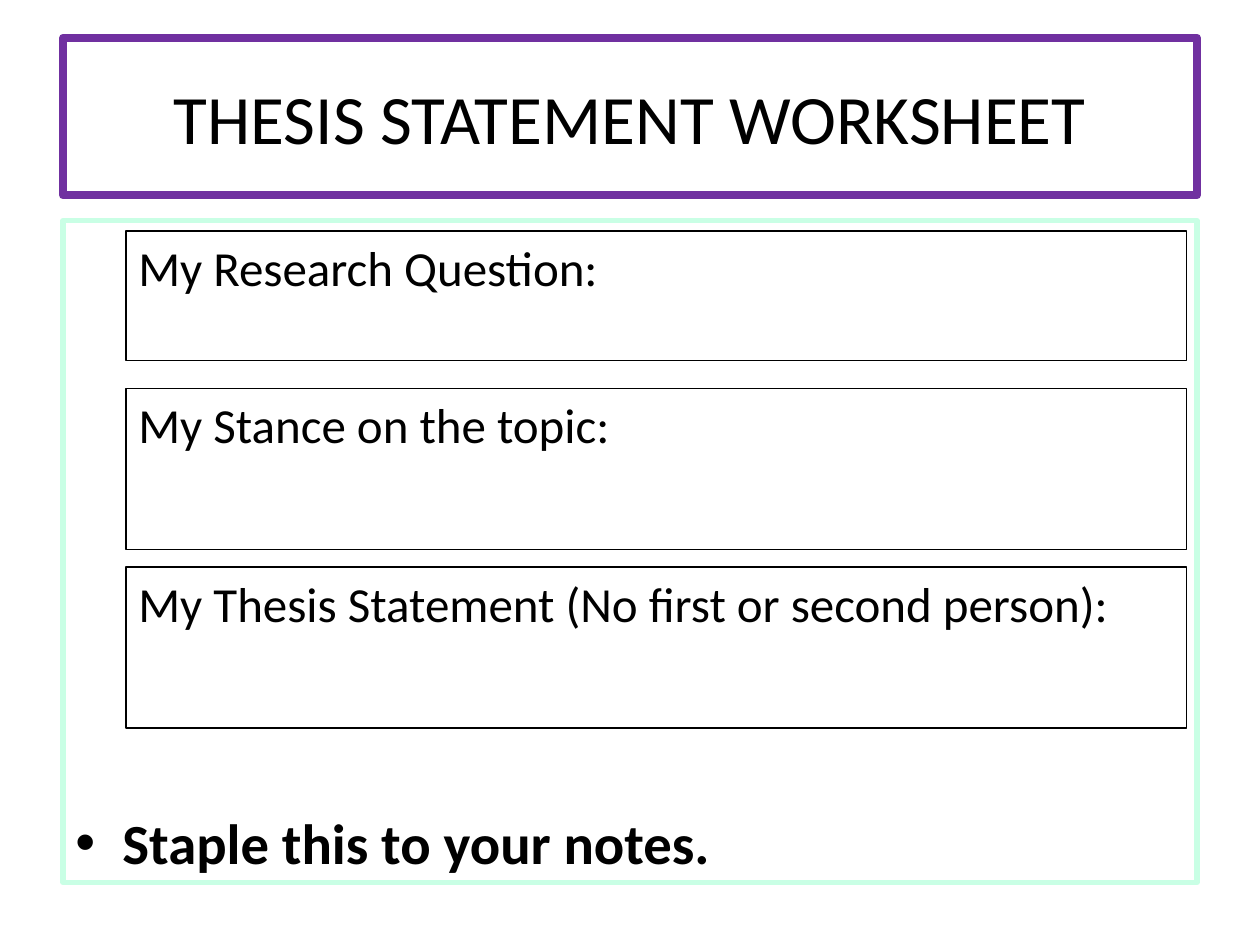
"""Build the thesis statement worksheet slide."""
from dataclasses import dataclass

from lxml.etree import SubElement
from pptx import Presentation
from pptx.dml.color import RGBColor as Rgb
from pptx.enum.text import MSO_ANCHOR as Anchor, MSO_AUTO_SIZE as Fit, PP_ALIGN as Align
from pptx.oxml.ns import qn
from pptx.util import Cm, Pt


@dataclass(frozen=True)
class Theme:
    font: str = "Calibri"
    ink: Rgb = Rgb(0, 0, 0)
    paper: Rgb = Rgb(255, 255, 255)
    plum: Rgb = Rgb(0x70, 0x30, 0xA0)
    mint: Rgb = Rgb(0xC9, 0xFF, 0xE5)
    head: float = 39.6
    note: float = 32.4
    field: float = 28


theme = Theme()


def write(shape, text, size, bold=False, align=Align.LEFT, anchor=Anchor.TOP,
          bullet=False, edge=theme.ink, width=0.75, fill=None):
    shape.line.color.rgb = edge
    shape.line.width = Pt(width)
    if fill is not None:
        shape.fill.solid()
        shape.fill.fore_color.rgb = fill
    frame = shape.text_frame
    frame.word_wrap = True
    frame.auto_size = Fit.NONE
    frame.vertical_anchor = anchor
    para = frame.paragraphs[0]
    para.alignment = align
    if bullet:
        props = para._p.get_or_add_pPr()
        props.set("marL", str(Cm(0.95)))
        props.set("indent", str(-Cm(0.95)))
        SubElement(props, qn("a:buFont")).set("typeface", "Arial")
        SubElement(props, qn("a:buChar")).set("char", "•")
    run = para.add_run()
    run.text = text
    run.font.name = theme.font
    run.font.size = Pt(size)
    run.font.bold = bold
    run.font.color.rgb = theme.ink


deck = Presentation()
deck.slide_width, deck.slide_height = Cm(25.4), Cm(19.05)
slide = deck.slides.add_slide(deck.slide_layouts[5])
shapes = slide.shapes

title = shapes.title
title.left, title.top = Cm(1.27), Cm(0.76)
title.width, title.height = Cm(22.86), Cm(3.18)
write(title, "THESIS STATEMENT WORKSHEET", theme.head, align=Align.CENTER,
      anchor=Anchor.MIDDLE, edge=theme.plum, width=4.5, fill=theme.paper)

panel = shapes.add_textbox(Cm(1.27), Cm(4.45), Cm(22.86), Cm(13.34))
write(panel, "Staple this to your notes.", theme.note, bold=True, bullet=True,
      anchor=Anchor.BOTTOM, edge=theme.mint, width=3, fill=theme.paper)

fields = [
    ("My Research Question:", 4.66, 2.61),
    ("My Stance on the topic:", 7.83, 3.25),
    ("My Thesis Statement (No first or second person):", 11.43, 3.25),
]
for label, top, height in fields:
    box = shapes.add_textbox(Cm(2.54), Cm(top), Cm(21.38), Cm(height))
    write(box, label, theme.field)

deck.save("out.pptx")
